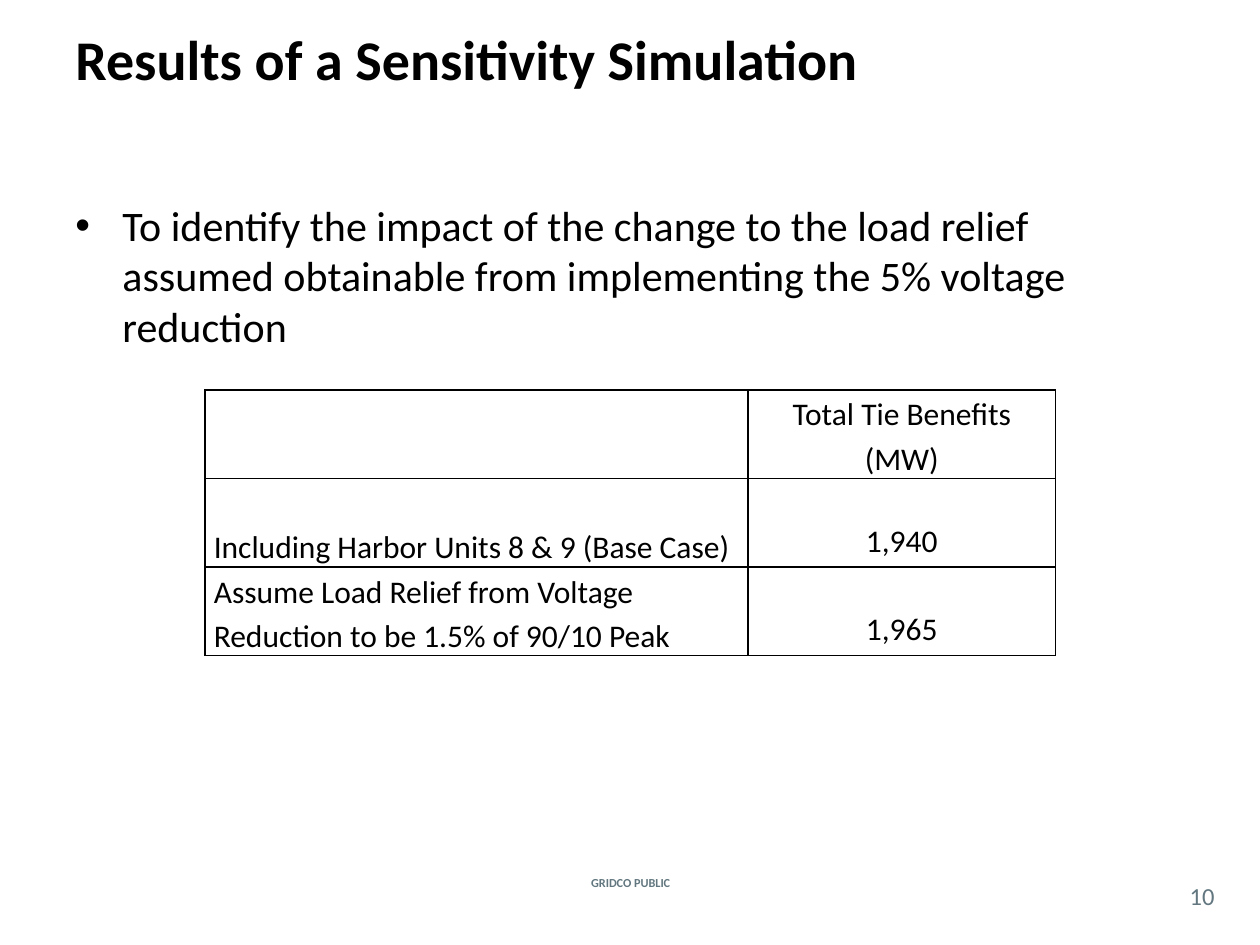
from dataclasses import dataclass

from lxml.etree import SubElement
from pptx import Presentation
from pptx.dml.color import RGBColor
from pptx.enum.text import MSO_ANCHOR, PP_ALIGN
from pptx.oxml.ns import qn
from pptx.util import Cm, Pt

FONT = "Calibri"
BLACK = "000000"
GREY = "62777F"


@dataclass(frozen=True)
class Box:
    """Position and size in centimetres."""
    left: float
    top: float
    width: float
    height: float

    def lengths(self) -> tuple:
        return tuple(Cm(value) for value in
                     (self.left, self.top, self.width, self.height))


@dataclass(frozen=True)
class TableRow:
    label: str
    value: str
    value_bottom: float = 0


def color(value: str) -> RGBColor:
    return RGBColor.from_string(value)


def write(paragraph, text: str, *, size: float, fill: str = BLACK, bold: bool = False,
          align=PP_ALIGN.LEFT, line_spacing: float = 1.0) -> None:
    paragraph.alignment = align
    paragraph.line_spacing = line_spacing
    run = paragraph.add_run()
    run.text = text
    run.font.name = FONT
    run.font.size = Pt(size)
    run.font.bold = bold
    run.font.color.rgb = color(fill)


def add_text(slide, box: Box, text: str, *, anchor=MSO_ANCHOR.MIDDLE,
             margins: tuple = (0.25, 0.13), bullet_indent: float = 0, **text_format) -> None:
    """Add a text box; margins are horizontal and vertical, in centimetres."""
    frame = slide.shapes.add_textbox(*box.lengths()).text_frame
    frame.word_wrap = True
    frame.vertical_anchor = anchor
    frame.margin_left = frame.margin_right = Cm(margins[0])
    frame.margin_top = frame.margin_bottom = Cm(margins[1])
    paragraph = frame.paragraphs[0]
    write(paragraph, text, **text_format)
    if bullet_indent:
        properties = paragraph._p.get_or_add_pPr()
        properties.set("marL", str(Cm(bullet_indent)))
        properties.set("indent", str(-Cm(bullet_indent)))
        SubElement(properties, qn("a:buFont"), typeface="Arial")
        SubElement(properties, qn("a:buChar"), char="•")


def set_borders(cell, line_color: str, width: float) -> None:
    properties = cell._tc.get_or_add_tcPr()
    for index, side in enumerate(("lnL", "lnR", "lnT", "lnB")):
        line = properties.makeelement(qn(f"a:{side}"), {"w": str(Pt(width))})
        fill = SubElement(line, qn("a:solidFill"))
        SubElement(fill, qn("a:srgbClr"), val=line_color)
        properties.insert(index, line)


def fill_cell(cell, text: str, *, align, bottom: float = 0) -> None:
    cell.fill.background()
    cell.vertical_anchor = MSO_ANCHOR.BOTTOM
    cell.margin_left = cell.margin_right = Cm(0.18)
    cell.margin_top = 0
    cell.margin_bottom = Cm(bottom)
    write(cell.text_frame.paragraphs[0], text, size=18, align=align, line_spacing=1.15)
    set_borders(cell, BLACK, 1)


def add_results_table(slide, box: Box, column_widths: tuple, rows: list[TableRow]) -> None:
    table = slide.shapes.add_table(len(rows), len(column_widths), *box.lengths()).table
    table.first_row = table.horz_banding = False
    for column, width in zip(table.columns, column_widths):
        column.width = Cm(width)
    for index, row in enumerate(rows):
        table.rows[index].height = Cm(box.height / len(rows))
        fill_cell(table.cell(index, 0), row.label, align=PP_ALIGN.LEFT)
        fill_cell(table.cell(index, 1), row.value, align=PP_ALIGN.CENTER,
                  bottom=row.value_bottom)


def main() -> None:
    presentation = Presentation()
    presentation.slide_width, presentation.slide_height = Cm(25.4), Cm(19.05)
    slide = presentation.slides.add_slide(presentation.slide_layouts[6])

    add_text(slide, Box(10.85, 17.58, 3.73, 0.43), "GRIDCO PUBLIC", size=7, fill=GREY,
             bold=True, align=PP_ALIGN.CENTER, margins=(0, 0))
    add_text(slide, Box(23.7, 17.68, 1.07, 0.74), "10", size=14, fill=GREY,
             align=PP_ALIGN.CENTER, margins=(0, 0))
    add_text(slide, Box(1.27, 0.2, 22.86, 3.18), "Results of a Sensitivity Simulation",
             size=32, bold=True, anchor=MSO_ANCHOR.TOP, margins=(0.25, 0.3))
    add_text(slide, Box(1.27, 3.89, 22.86, 4.37),
             "To identify the impact of the change to the load relief assumed obtainable "
             "from implementing the 5% voltage reduction",
             size=24, anchor=MSO_ANCHOR.TOP, bullet_indent=0.95)
    add_results_table(slide, Box(4.13, 7.86, 17.15, 5.36), (10.95, 6.2), [
        TableRow("", "Total Tie Benefits (MW)"),
        TableRow("Including Harbor Units 8 & 9 (Base Case)", "1,940", 0.13),
        TableRow("Assume Load Relief from Voltage Reduction to be 1.5% of 90/10 Peak",
                 "1,965", 0.13),
    ])
    presentation.save("out.pptx")


if __name__ == "__main__":
    main()
